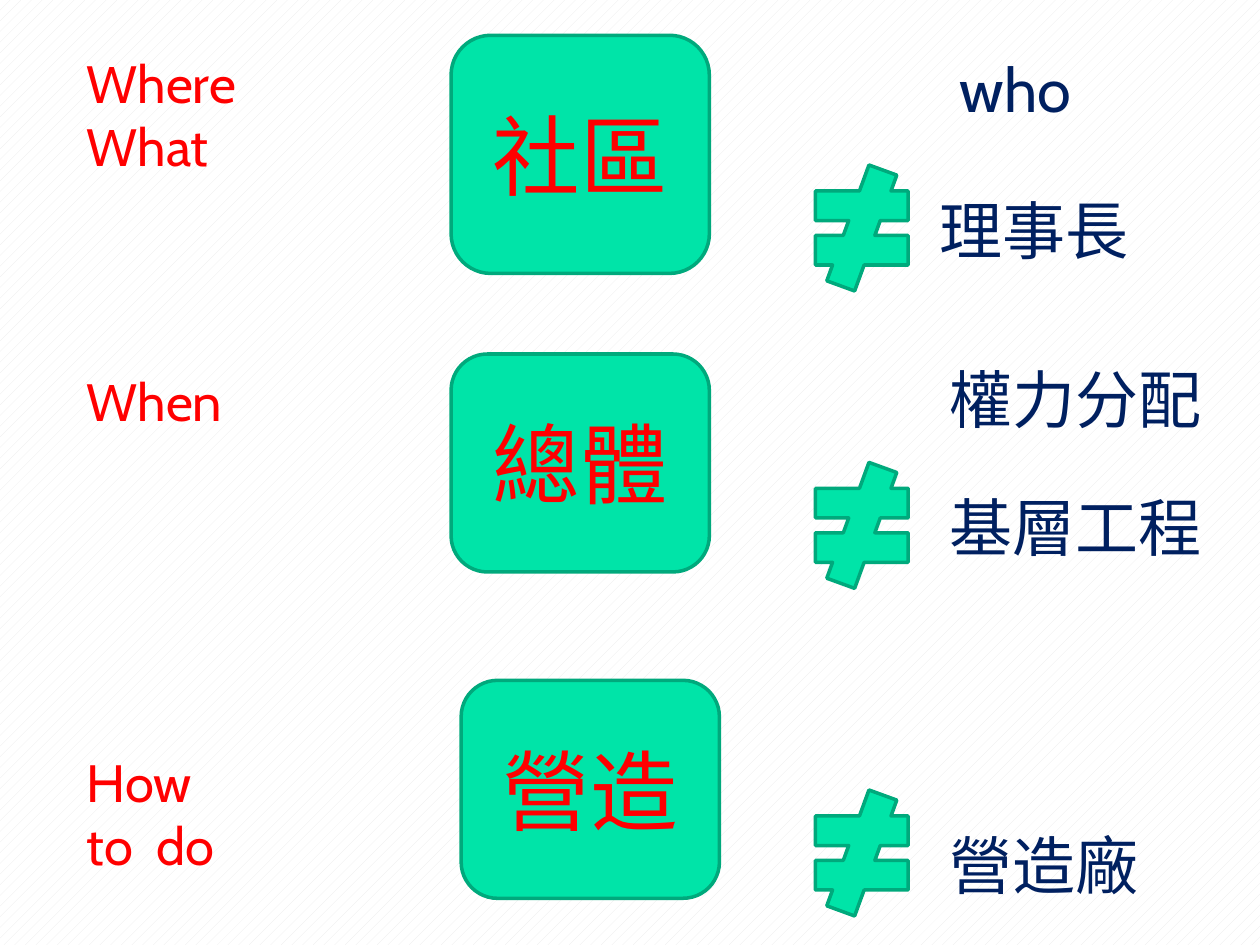
from dataclasses import dataclass

from pptx import Presentation
from pptx.dml.color import RGBColor
from pptx.enum.dml import MSO_PATTERN
from pptx.enum.shapes import MSO_SHAPE
from pptx.enum.text import MSO_ANCHOR, MSO_AUTO_SIZE, PP_ALIGN
from pptx.util import Inches, Pt

ROUNDED = MSO_SHAPE.ROUNDED_RECTANGLE
NOT_EQUAL = MSO_SHAPE.MATH_NOT_EQUAL
FONT = "Cabin"
GREEN, DARK_GREEN = "00E4A8", "00A97C"
RED, NAVY = "FF0000", "002060"
QUESTION_LINE = 36.4  # points taken by one line of the questions


@dataclass
class Box:
    left: float
    top: float
    width: float
    height: float
    text: str = ""
    size: float = 36
    wrap: bool = False

    def inches(self):
        return [Inches(n) for n in (self.left, self.top, self.width, self.height)]


KEYWORDS = [
    Box(3.58, 0.28, 2.05, 1.89, "社區"),
    Box(3.58, 2.81, 2.05, 1.73, "總體"),
    Box(3.66, 5.4, 2.05, 1.73, "營造"),
]
ANSWERS = [
    Box(7.52, 0.36, 1.89, 0.69, "who", 35, True),
    Box(7.36, 1.47, 1.72, 0.71, "理事長"),
    Box(7.44, 2.81, 2.22, 0.71, "權力分配"),
    Box(7.44, 3.83, 2.22, 0.71, "基層工程"),
    Box(7.44, 6.51, 1.72, 0.71, "營造廠"),
]
SIGN_TOPS = [1.31, 3.67, 6.27]
# Each question with the number of line heights left free above it
QUESTIONS = [("Where", 0), ("What", 0), ("When", 3), ("How", 5), ("to  do", 0)]


def rgb(value: str) -> RGBColor:
    return RGBColor.from_string(value)


def write(paragraph, text: str, *, size: float, color: str,
          align=PP_ALIGN.LEFT, before: float = 0) -> None:
    paragraph.alignment = align
    if before:
        paragraph.space_before = Pt(before)
    run = paragraph.add_run()
    run.text = text
    run.font.name = FONT
    run.font.size = Pt(size)
    run.font.color.rgb = rgb(color)


def add_green_shape(slide, kind, box: Box):
    shape = slide.shapes.add_shape(kind, *box.inches())
    shape.shadow.inherit = False
    shape.fill.solid()
    shape.fill.fore_color.rgb = rgb(GREEN)
    shape.line.color.rgb = rgb(DARK_GREEN)
    shape.line.width = Pt(2)
    return shape


def add_text_frame(slide, box: Box):
    frame = slide.shapes.add_textbox(*box.inches()).text_frame
    frame.word_wrap = box.wrap
    frame.auto_size = MSO_AUTO_SIZE.SHAPE_TO_FIT_TEXT
    return frame


def add_keyword(slide, box: Box) -> None:
    frame = add_green_shape(slide, ROUNDED, box).text_frame
    frame.vertical_anchor = MSO_ANCHOR.MIDDLE
    write(frame.paragraphs[0], box.text, size=50, color=RED, align=PP_ALIGN.CENTER)


def add_questions(slide) -> None:
    frame = add_text_frame(slide, Box(0.59, 0.36, 2.44, 6.66, wrap=True))
    for index, (text, gap) in enumerate(QUESTIONS):
        paragraph = frame.add_paragraph() if index else frame.paragraphs[0]
        write(paragraph, text, size=30, color=RED, before=gap * QUESTION_LINE)


def main() -> None:
    presentation = Presentation()
    presentation.slide_width = Inches(10)
    presentation.slide_height = Inches(7.5)
    slide = presentation.slides.add_slide(presentation.slide_layouts[6])

    background = slide.background.fill
    background.patterned()
    background.pattern = MSO_PATTERN.DASHED_UPWARD_DIAGONAL
    background.fore_color.rgb = rgb("EAEAEA")
    background.back_color.rgb = rgb("FFFFFF")

    for top in SIGN_TOPS:
        add_green_shape(slide, NOT_EQUAL, Box(6.34, top, 1, 1))
    for box in KEYWORDS:
        add_keyword(slide, box)
    add_questions(slide)
    for box in ANSWERS:
        frame = add_text_frame(slide, box)
        write(frame.paragraphs[0], box.text, size=box.size, color=NAVY)

    presentation.save("out.pptx")


if __name__ == "__main__":
    main()
